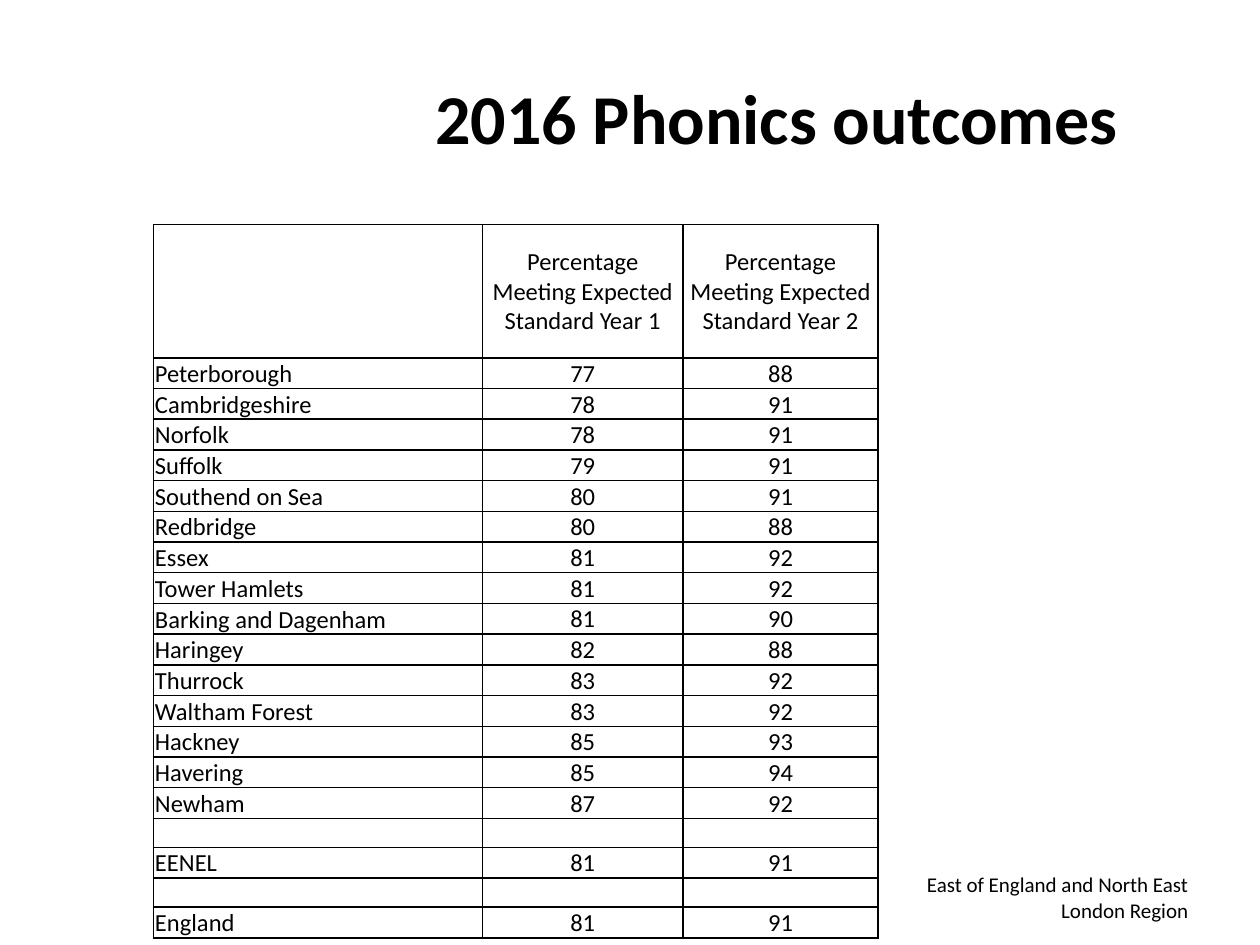
from lxml.etree import SubElement
from pptx import Presentation
from pptx.dml.color import RGBColor
from pptx.enum.text import MSO_ANCHOR as Anchor, PP_ALIGN as Align
from pptx.oxml.ns import qn
from pptx.util import Inches, Pt

COLORS = {"ink": "000000", "border": "000000"}
FONT = "Calibri"

# Content
TITLE = "2016 Phonics outcomes"
REGION = "East of England and North East London Region"
HEADER = (
    "",
    "Percentage Meeting Expected Standard Year 1",
    "Percentage Meeting Expected Standard Year 2",
)
GAP = ("", "", "")
OUTCOMES = [
    ("Peterborough", 77, 88),
    ("Cambridgeshire", 78, 91),
    ("Norfolk", 78, 91),
    ("Suffolk", 79, 91),
    ("Southend on Sea", 80, 91),
    ("Redbridge", 80, 88),
    ("Essex", 81, 92),
    ("Tower Hamlets", 81, 92),
    ("Barking and Dagenham", 81, 90),
    ("Haringey", 82, 88),
    ("Thurrock", 83, 92),
    ("Waltham Forest", 83, 92),
    ("Hackney", 85, 93),
    ("Havering", 85, 94),
    ("Newham", 87, 92),
    GAP,
    ("EENEL", 81, 91),
    GAP,
    ("England", 81, 91),
]

# Table measures in inches
COLUMN_WIDTHS = (2.61, 1.59, 1.55)
HEADER_HEIGHT, ROW_HEIGHT, GAP_HEIGHT = 1.06, 0.24, 0.23


def style(paragraph, size, align, bold=False):
    paragraph.alignment = align
    font = paragraph.font
    font.name, font.size, font.bold = FONT, Pt(size), bold
    font.color.rgb = RGBColor.from_string(COLORS["ink"])


def add_label(slide, box, text, size, align, bold=False):
    frame = slide.shapes.add_textbox(*map(Inches, box)).text_frame
    frame.word_wrap = True
    frame.vertical_anchor = Anchor.MIDDLE
    frame.text = text
    style(frame.paragraphs[0], size, align, bold)


def add_borders(cell):
    properties = cell._tc.get_or_add_tcPr()
    for side in ("a:lnL", "a:lnR", "a:lnT", "a:lnB"):
        line = SubElement(properties, qn(side), w=str(Pt(1)))
        fill = SubElement(line, qn("a:solidFill"))
        SubElement(fill, qn("a:srgbClr"), val=COLORS["border"])


def fill_cell(cell, value, align, anchor):
    add_borders(cell)
    cell.fill.background()
    cell.margin_left = cell.margin_right = cell.margin_top = Inches(0.01)
    cell.margin_bottom = 0
    cell.vertical_anchor = anchor
    cell.text = str(value)
    paragraph = cell.text_frame.paragraphs[0]
    style(paragraph, 14, align)
    if value == "":
        # A small end mark keeps empty rows at their set height
        SubElement(paragraph._p, qn("a:endParaRPr"), sz="1200")


def add_outcomes(slide):
    rows = [HEADER] + OUTCOMES
    heights = [HEADER_HEIGHT] + [
        GAP_HEIGHT if row == GAP else ROW_HEIGHT for row in OUTCOMES
    ]
    box = (1.22, 1.78, sum(COLUMN_WIDTHS), sum(heights))
    table = slide.shapes.add_table(
        len(rows), len(HEADER), *map(Inches, box)
    ).table
    table.first_row = table.horz_banding = False
    for column, width in zip(table.columns, COLUMN_WIDTHS):
        column.width = Inches(width)
    for r, (row, height) in enumerate(zip(rows, heights)):
        table.rows[r].height = Inches(height)
        for c, value in enumerate(row):
            is_figure = r > 0 and c > 0
            fill_cell(
                table.cell(r, c),
                value,
                Align.CENTER if c else Align.LEFT,
                Anchor.BOTTOM if is_figure or value == "EENEL" else Anchor.MIDDLE,
            )


def main():
    deck = Presentation()
    deck.slide_width, deck.slide_height = Inches(10), Inches(7.5)
    slide = deck.slides.add_slide(deck.slide_layouts[6])

    # Region footer, title and results table
    add_label(slide, (7.2, 6.92, 2.33, 0.4), REGION, 12, Align.RIGHT)
    add_label(slide, (2.83, 0.3, 6.67, 1.25), TITLE, 40, Align.CENTER, bold=True)
    add_outcomes(slide)

    deck.save("out.pptx")


if __name__ == "__main__":
    main()
